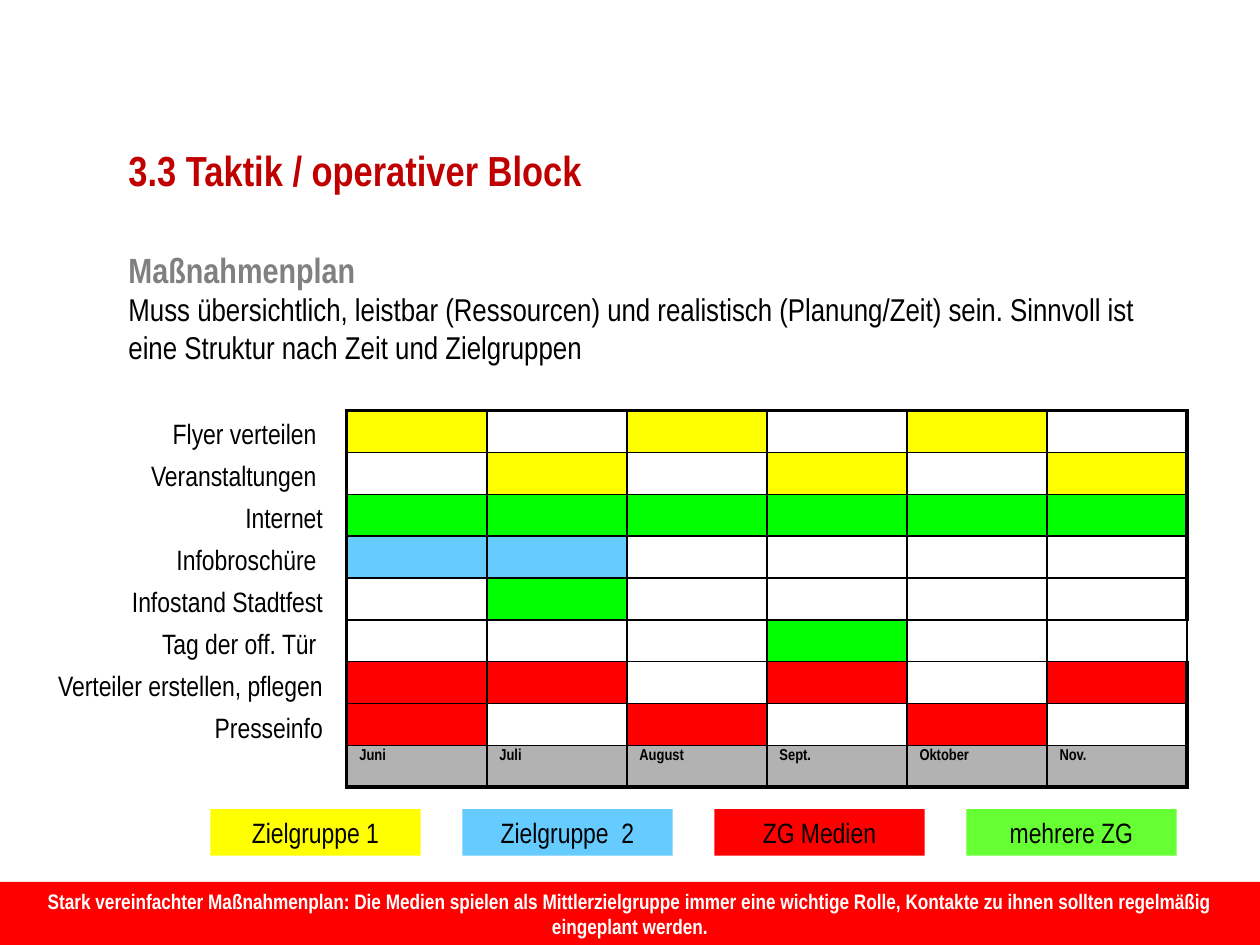
from lxml import etree
from pptx import Presentation
from pptx.dml.color import RGBColor
from pptx.enum.shapes import MSO_SHAPE
from pptx.enum.text import MSO_ANCHOR, PP_ALIGN
from pptx.oxml.ns import qn
from pptx.util import Cm, Pt

LEFT, CENTER, RIGHT = PP_ALIGN.LEFT, PP_ALIGN.CENTER, PP_ALIGN.RIGHT
TOP, MIDDLE = MSO_ANCHOR.TOP, MSO_ANCHOR.MIDDLE
RECTANGLE = MSO_SHAPE.RECTANGLE

BLACK = RGBColor(0x00, 0x00, 0x00)
WHITE = RGBColor(0xFF, 0xFF, 0xFF)
DARK_RED = RGBColor(0xC0, 0x00, 0x00)
GRAY = RGBColor(0x80, 0x80, 0x80)
SILVER = RGBColor(0xB2, 0xB2, 0xB2)
YELLOW = RGBColor(0xFF, 0xFF, 0x00)
GREEN = RGBColor(0x00, 0xFF, 0x00)
LIME = RGBColor(0x66, 0xFF, 0x33)
BLUE = RGBColor(0x66, 0xCC, 0xFF)
RED = RGBColor(0xFF, 0x00, 0x00)

FONT = "Arial Narrow"
THIN, THICK = Pt(1), Pt(2.25)

TITLE = "3.3 Taktik / operativer Block"
SUBTITLE = "Maßnahmenplan"
INTRO = ("Muss übersichtlich, leistbar (Ressourcen) und realistisch (Planung/Zeit) sein. "
         "Sinnvoll ist eine Struktur nach Zeit und Zielgruppen")
MONTHS = ["Juni", "Juli", "August", "Sept.", "Oktober", "Nov."]
# Measure, colour, active months (one mark per month)
MEASURES = [
    ("Flyer verteilen ", YELLOW, "x-x-x-"),
    ("Veranstaltungen ", YELLOW, "-x-x-x"),
    ("Internet", GREEN, "xxxxxx"),
    ("Infobroschüre ", BLUE, "xx----"),
    ("Infostand Stadtfest", GREEN, "-x----"),
    ("Tag der off. Tür ", GREEN, "---x--"),
    ("Verteiler erstellen, pflegen", RED, "xx-x-x"),
    ("Presseinfo", RED, "x-x-x-"),
]
OPEN_ROW = 5  # its right edge stays thin
LEGEND = [("Zielgruppe 1", YELLOW), ("Zielgruppe  2", BLUE),
          ("ZG Medien", RED), ("mehrere ZG", LIME)]
CONCLUSION = ("Stark vereinfachter Maßnahmenplan: Die Medien spielen als Mittlerzielgruppe "
              "immer eine wichtige Rolle, Kontakte zu ihnen sollten regelmäßig "
              "eingeplant werden.")


def style_span(span, size, color, bold=False):
    span.font.name = FONT
    span.font.size = Pt(size)
    span.font.color.rgb = color
    span.font.bold = bold


def write(shape, text, size, color, bold=False, align=LEFT, anchor=TOP, gap=0):
    frame = shape.text_frame
    frame.word_wrap = True
    frame.vertical_anchor = anchor
    frame.text = text
    for index, para in enumerate(frame.paragraphs):
        para.alignment = align
        if index:
            para.space_before = Pt(gap)
        for span in para.runs:
            style_span(span, size, color, bold)


def add_text(slide, left, top, width, height, *args, **options):
    box = slide.shapes.add_textbox(Cm(left), Cm(top), Cm(width), Cm(height))
    write(box, *args, **options)
    return box


def add_bar(slide, left, top, width, height, fill, *args, **options):
    bar = slide.shapes.add_shape(RECTANGLE, Cm(left), Cm(top), Cm(width), Cm(height))
    bar.shadow.inherit = False
    bar.fill.solid()
    bar.fill.fore_color.rgb = fill
    bar.line.fill.background()
    write(bar, *args, align=CENTER, **options)


def set_borders(cell, widths):
    """Draw black cell edges; widths run left, right, top, bottom."""
    properties = cell._tc.get_or_add_tcPr()
    for side, width in zip("LRTB", widths):
        line = etree.SubElement(properties, qn(f"a:ln{side}"), w=str(width))
        fill = etree.SubElement(line, qn("a:solidFill"))
        etree.SubElement(fill, qn("a:srgbClr"), val=str(BLACK))


def add_plan(slide):
    rows, columns = len(MEASURES) + 1, len(MONTHS)
    frame = slide.shapes.add_table(rows, columns, Cm(6.99), Cm(8.28), Cm(16.94), Cm(7.59))
    table = frame.table
    table.first_row = table.horz_banding = False
    for row in range(rows):
        for column in range(columns):
            cell = table.cell(row, column)
            cell.margin_top, cell.margin_bottom = Cm(0.08), 0
            right_edge = column == columns - 1 and row != OPEN_ROW
            edges = (column == 0, right_edge, row == 0, row == rows - 1)
            set_borders(cell, [THICK if outer else THIN for outer in edges])
            if row == rows - 1:
                color = SILVER
                write(cell, MONTHS[column], 9, BLACK, bold=True)
            else:
                _, active_color, marks = MEASURES[row]
                color = active_color if marks[column] == "x" else WHITE
            cell.fill.solid()
            cell.fill.fore_color.rgb = color


def main():
    deck = Presentation()
    deck.slide_width, deck.slide_height = Cm(25.4), Cm(19.05)
    slide = deck.slides.add_slide(deck.slide_layouts[6])

    intro = add_text(slide, 2.34, 4.88, 21.79, 2.62, f"{SUBTITLE}\v{INTRO}", 18, BLACK)
    style_span(intro.text_frame.paragraphs[0].runs[0], 20, GRAY, bold=True)
    add_text(slide, 2.34, 2.78, 16.51, 1.27, TITLE, 24, DARK_RED, bold=True)

    labels = "\n".join(name for name, _, _ in MEASURES)
    add_text(slide, 0.63, 8.28, 6.13, 6.93, labels, 16, BLACK, align=RIGHT, gap=4.8)
    add_plan(slide)

    for index, (name, color) in enumerate(LEGEND):
        add_bar(slide, 4.24 + 5.08 * index, 16.31, 4.24, 0.94, color,
                name, 16, BLACK, anchor=MIDDLE)
    add_bar(slide, 0, 17.78, 25.4, 1.27, RED, CONCLUSION, 12, WHITE, bold=True)
    deck.save("out.pptx")


if __name__ == "__main__":
    main()
